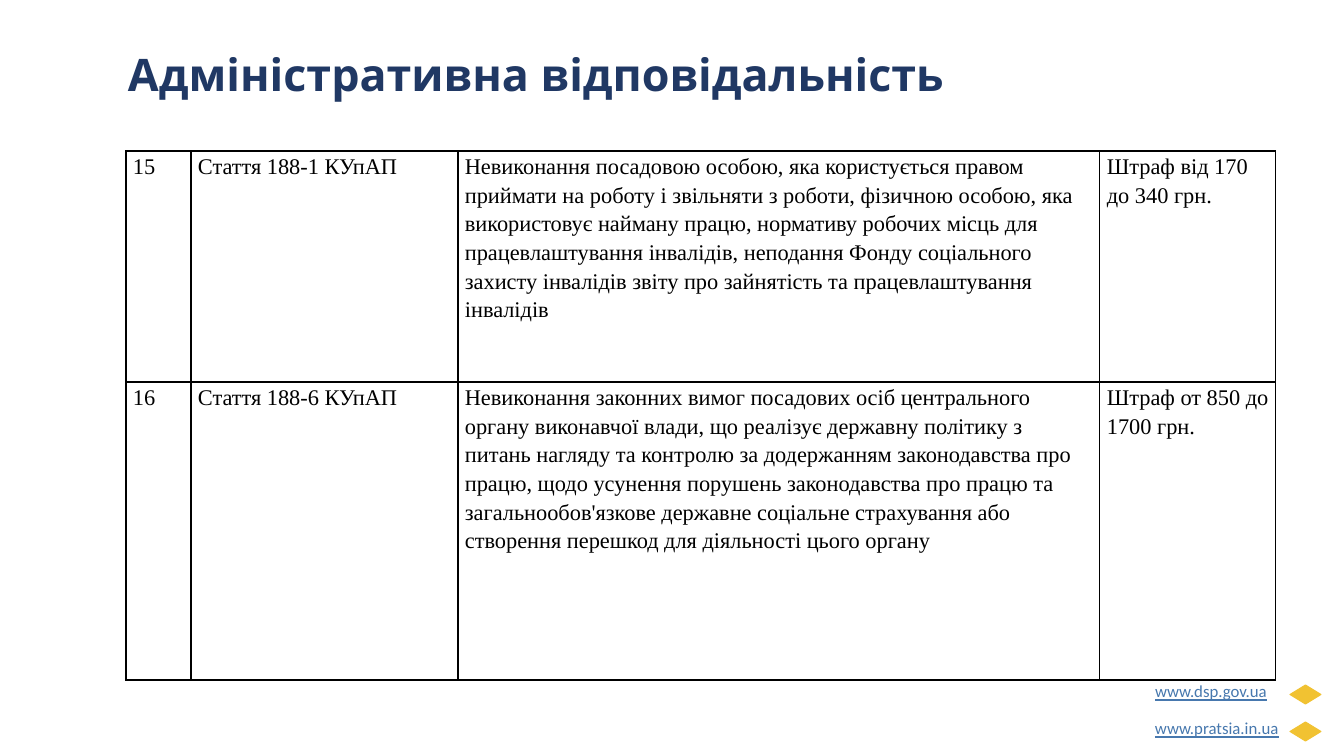
import pptx
import pptx.dml.color
import pptx.enum.shapes
import pptx.enum.text
import pptx.oxml
import pptx.oxml.ns
import pptx.util

PX = 9071.43  # EMU per px, at 100.8 px to the inch
NAVY = pptx.dml.color.RGBColor(0x20, 0x38, 0x64)
BLUE = pptx.dml.color.RGBColor(0x47, 0x78, 0xAE)
GOLD = pptx.dml.color.RGBColor(0xF1, 0xC2, 0x32)
BLACK = pptx.dml.color.RGBColor(0, 0, 0)


def px(*lengths):
    return [pptx.util.Emu(round(length * PX)) for length in lengths]


def add_text(page, text, place, margins, name, size, color):
    box = page.shapes.add_textbox(*px(*place))
    frame = box.text_frame
    frame.word_wrap = True
    frame.auto_size = pptx.enum.text.MSO_AUTO_SIZE.SHAPE_TO_FIT_TEXT
    (frame.margin_left, frame.margin_top,
     frame.margin_right, frame.margin_bottom) = px(*margins)
    para = frame.paragraphs[0]
    para.text = text
    para.font.name = name
    para.font.size = pptx.util.Pt(size)
    para.font.color.rgb = color
    return para


deck = pptx.Presentation()
deck.slide_width, deck.slide_height = px(1344, 756)
page = deck.slides.add_slide(deck.slide_layouts[6])

# Site addresses with diamond markers
for row, (address, width) in enumerate([("www.dsp.gov.ua", 156), ("www.pratsia.in.ua", 175)]):
    shift = row * 37
    diamond = page.shapes.add_shape(
        pptx.enum.shapes.MSO_SHAPE.FLOWCHART_DECISION, *px(1290, 685 + shift, 31, 19))
    diamond.shadow.inherit = False
    diamond.fill.solid()
    diamond.fill.fore_color.rgb = GOLD
    diamond.line.color.rgb = GOLD
    diamond.line.width = pptx.util.Pt(0.75)
    para = add_text(page, address, (1142, 671 + shift, width, 47), (13, 13, 13, 13),
                    "Calibri", 12, BLUE)
    para.font.underline = True

# Title
title = add_text(page, "Адміністративна відповідальність", (118, 42, 1004, 65),
                 (10, 5, 10, 5), "Open Sans", 32, NAVY)
title.font.bold = True

# Table of offences and fines
offences = [
    ("15", "Стаття 188-1 КУпАП",
     "Невиконання посадовою особою, яка користується правом приймати на роботу і "
     "звільняти з роботи, фізичною особою, яка використовує найману працю, нормативу "
     "робочих місць для працевлаштування інвалідів, неподання Фонду соціального захисту "
     "інвалідів звіту про зайнятість та працевлаштування інвалідів",
     "Штраф від 170 до 340 грн."),
    ("16", "Стаття 188-6 КУпАП",
     "Невиконання законних вимог посадових осіб центрального органу виконавчої влади, "
     "що реалізує державну політику з питань нагляду та контролю за додержанням "
     "законодавства про працю, щодо усунення порушень законодавства про працю та "
     "загальнообов'язкове державне соціальне страхування або створення перешкод для "
     "діяльності цього органу",
     "Штраф от 850 до 1700 грн."),
]
widths = px(65, 267, 642, 176)
heights = px(231, 298)
table = page.shapes.add_table(len(heights), len(widths), *px(126, 151, 1150, 529)).table
table.first_row = False
table.horz_banding = False
for column, width in zip(table.columns, widths):
    column.width = width
for row, height, offence in zip(table.rows, heights, offences):
    row.height = height
    for cell, text in zip(row.cells, offence):
        cell.margin_left, cell.margin_top, cell.margin_right, cell.margin_bottom = px(7, 0, 7, 0)
        para = cell.text_frame.paragraphs[0]
        para.text = text
        para.line_spacing = 1.15
        para.font.name = "Times New Roman"
        para.font.size = pptx.util.Pt(16)
        para.font.color.rgb = BLACK
        # Cell borders come before the fill
        properties = cell._tc.get_or_add_tcPr()
        for side in ("lnL", "lnR", "lnT", "lnB"):
            properties.append(pptx.oxml.parse_xml(
                f'<a:{side} {pptx.oxml.ns.nsdecls("a")} w="12700"><a:solidFill>'
                f'<a:srgbClr val="{BLACK}"/></a:solidFill></a:{side}>'))
        cell.fill.background()

deck.save("out.pptx")
